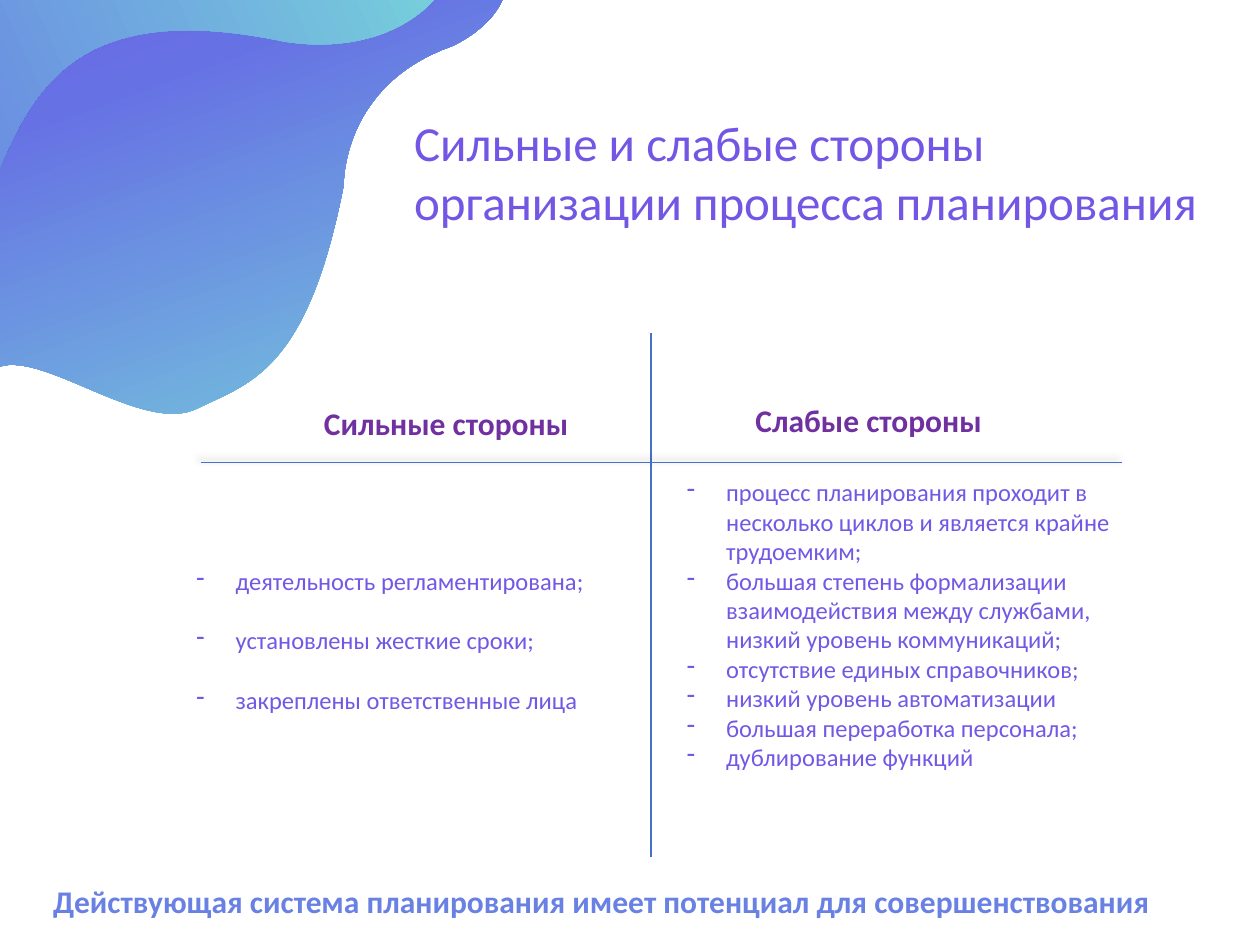
from lxml import etree
from pptx import Presentation
from pptx.dml.color import RGBColor
from pptx.enum.shapes import MSO_CONNECTOR
from pptx.enum.text import MSO_AUTO_SIZE
from pptx.oxml import parse_xml
from pptx.oxml.ns import nsdecls, qn
from pptx.util import Cm, Pt

STRAIGHT = MSO_CONNECTOR.STRAIGHT
GROW = MSO_AUTO_SIZE.SHAPE_TO_FIT_TEXT
FONT = "Calibri"
COLORS = {
    "title": "7357E4",
    "list": "7258E4",
    "heading": "7030A0",
    "conclusion": "6981E3",
    "line": "4472C4",
    "shadow": "000000",
    "mint": "7AE4D9",
    "aqua": "78D9DA",
    "blue": "6672E4",
    "violet": "882BE5",
}
LARGE_WAVE = [
    (10.21, -0.61),
    (10.21, -0.61), (10.57, -3.48), (5.66, -4.7),
    (0.76, -5.92), (-0.56, -0.97), (-1.02, 0.81),
    (-1.45, 2.59), (-1.63, 2.95), (-3.05, 4.06),
    (-4.45, 5.13), (-6.71, 5.44), (-5.31, 7.85),
    (-3.89, 10.29), (-0.91, 7.57), (0.08, 7.37),
    (1.04, 7.19), (2.95, 8.76), (3.99, 8.23),
    (5.03, 7.72), (6.2, 7.49), (6.93, 3.73),
    (6.93, 3.73), (6.88, 1.73), (9.09, 0.94),
    (9.09, 0.94), (10.36, 0.41), (10.21, -0.61),
]
CORNER_WAVE = [
    (5.69, -4.67),
    (7.9, -4.14), (9.04, -3.23), (9.63, -2.41),
    (9.65, -1.98), (9.58, -1.52), (9.4, -1.04),
    (8.41, 1.5), (5.59, 0.81), (5.59, 0.81),
    (-1.3, -0.56), (0.86, 5.56), (-2.59, 7.44),
    (-3.51, 7.95), (-4.32, 8.2), (-5, 8.28),
    (-5.11, 8.18), (-5.21, 8.03), (-5.28, 7.87),
    (-6.71, 5.46), (-4.45, 5.16), (-3.02, 4.09),
    (-1.6, 3.02), (-1.42, 2.59), (-0.99, 0.84),
    (-0.56, -0.94), (0.76, -5.89), (5.69, -4.67),
]
STRENGTHS = [
    "деятельность регламентирована;",
    "установлены жесткие сроки;",
    "закреплены ответственные лица",
]
WEAKNESSES = [
    "процесс планирования проходит в несколько циклов и является крайне трудоемким;",
    "большая степень формализации взаимодействия между службами, низкий уровень коммуникаций;",
    "отсутствие единых справочников;",
    "низкий уровень автоматизации",
    "большая переработка персонала;",
    "дублирование функций",
]


def bend_segments(shape):
    """Turn each three straight segments of an outline into one cubic curve."""
    segments = list(shape._element.iter(qn("a:lnTo")))
    for start in range(0, len(segments), 3):
        curve = etree.Element(qn("a:cubicBezTo"))
        segments[start].addprevious(curve)
        for segment in segments[start:start + 3]:
            curve.append(segment[0])
            segment.getparent().remove(segment)


def add_wave(slide, controls, stops, angle):
    """Add a curved outline with a gradient running clockwise from the x axis."""
    points = [(Cm(x), Cm(y)) for x, y in controls]
    builder = slide.shapes.build_freeform(*points[0])
    builder.add_line_segments(points[1:])
    shape = builder.convert_to_shape()
    bend_segments(shape)
    shape.shadow.inherit = False
    shape.line.fill.background()
    stop_xml = "".join(
        f'<a:gs pos="{position * 1000}"><a:srgbClr val="{COLORS[color]}"/></a:gs>'
        for position, color in stops
    )
    gradient = parse_xml(
        f'<a:gradFill {nsdecls("a")}><a:gsLst>{stop_xml}</a:gsLst>'
        f'<a:lin ang="{angle * 60000}" scaled="0"/></a:gradFill>'
    )
    shape._element.spPr.find(qn("a:custGeom")).addnext(gradient)


def add_line(slide, start, end, width, shadow=False):
    """Add a straight rule, with a soft shadow if asked."""
    line = slide.shapes.add_connector(STRAIGHT, *map(Cm, start + end))
    line.line.color.rgb = RGBColor.from_string(COLORS["line"])
    line.line.width = Pt(width)
    effects = etree.SubElement(line._element.spPr, qn("a:effectLst"))
    if shadow:
        effects.append(parse_xml(
            f'<a:outerShdw {nsdecls("a")} blurRad="{Pt(4)}" dist="{Pt(3)}" '
            f'dir="{225 * 60000}" algn="br" rotWithShape="0">'
            f'<a:srgbClr val="{COLORS["shadow"]}"><a:alpha val="40000"/></a:srgbClr>'
            '</a:outerShdw>'
        ))


def add_text(slide, box, lines, size, color, bold=False, bullet=None, gap=0):
    """Add a wrapped text box with one paragraph for each line."""
    frame = slide.shapes.add_textbox(*map(Cm, box)).text_frame
    frame.word_wrap = True
    frame.auto_size = GROW
    for index, line in enumerate(lines):
        paragraph = frame.paragraphs[0] if index == 0 else frame.add_paragraph()
        paragraph.text = line
        if index and gap:
            paragraph.space_before = Pt(gap)
        if bullet:
            properties = paragraph._p.get_or_add_pPr()
            properties.set("marL", str(Cm(0.79)))
            properties.set("indent", str(-Cm(0.79)))
            etree.SubElement(properties, qn("a:buFontTx"))
            etree.SubElement(properties, qn("a:buChar")).set("char", bullet)
        paragraph.font.name = FONT
        paragraph.font.size = Pt(size)
        paragraph.font.bold = bold
        paragraph.font.color.rgb = RGBColor.from_string(COLORS[color])


def main():
    """Build and save the slide."""
    presentation = Presentation()
    presentation.slide_width = Cm(25.4)
    presentation.slide_height = Cm(19.05)
    slide = presentation.slides.add_slide(presentation.slide_layouts[6])

    add_wave(slide, LARGE_WAVE, [(0, "aqua"), (51, "blue"), (100, "violet")], 250)
    add_wave(slide, CORNER_WAVE, [(0, "violet"), (19, "blue"), (100, "mint")], 335)

    add_text(slide, (8.1, 2.15, 17.3, 2.64),
             ["Сильные и слабые стороны организации процесса планирования"], 28, "title")
    add_line(slide, (13.13, 6.71), (13.13, 17.27), 1)
    add_line(slide, (4.05, 9.32), (22.62, 9.32), 0.5, shadow=True)

    add_text(slide, (6.28, 8.03, 6.43, 1.02), ["Сильные стороны"], 18, "heading", bold=True)
    add_text(slide, (14.98, 7.96, 6.43, 1.02), ["Слабые стороны"], 18, "heading", bold=True)
    add_text(slide, (13.6, 9.5, 10.06, 6.83), WEAKNESSES, 14, "list", bullet="-")
    add_text(slide, (3.71, 11.29, 10.06, 3.84), STRENGTHS, 14, "list", bullet="-", gap=17)
    add_text(slide, (0.82, 17.65, 23.75, 1.02),
             ["Действующая система планирования имеет потенциал для совершенствования"],
             18, "conclusion", bold=True)

    presentation.save("out.pptx")


if __name__ == "__main__":
    main()
